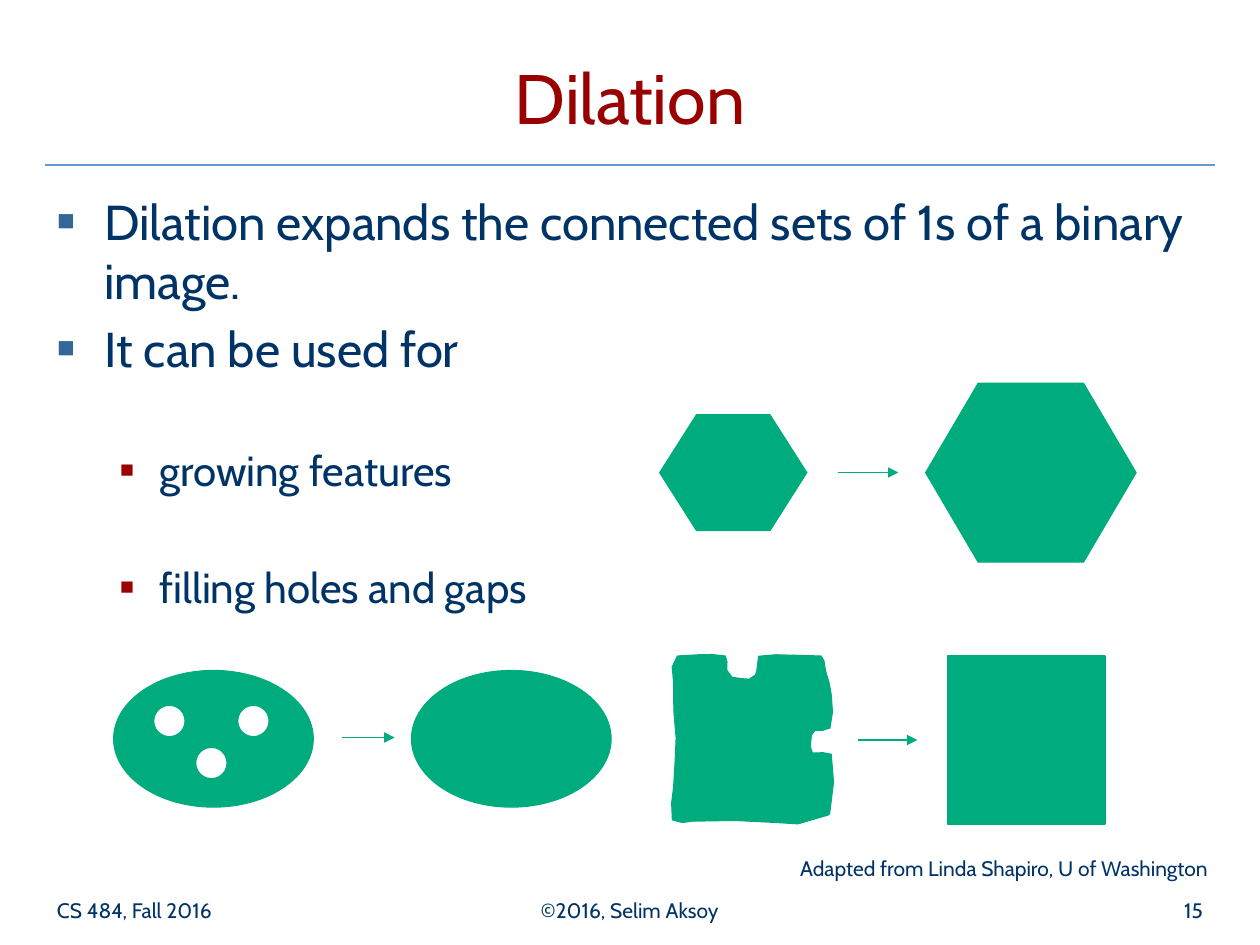
"""Build a slide on dilation of binary images, with before-and-after shapes."""
from lxml import etree
from pptx import Presentation
from pptx import util as u
from pptx.dml import color
from pptx.enum import shapes, text
from pptx.oxml import ns

COLORS = {"rule": "6699CC", "ink": "003366", "title": "990000", "white": "FFFFFF",
          "bullet": "336699", "subbullet": "990000", "feature": "00AB7E"}
FONT = "Cabin"
ALIGN = text.PP_ALIGN
BOTTOM, TOP = text.MSO_ANCHOR.BOTTOM, text.MSO_ANCHOR.TOP
KIND = shapes.MSO_SHAPE

LEVELS = {
    0: {"size": 28, "margin": 27, "hanging": 27, "bullet": "bullet", "scale": 60},
    1: {"size": 24, "margin": 58.5, "hanging": 22.5, "bullet": "subbullet", "scale": 55},
}
POINTS = [
    (0, 0, "Dilation expands the connected sets of 1s of a binary image."),
    (0, 5.3, "It can be used for"),
    (1, 38.3, "growing features"),
    (1, 38.3, "filling holes and gaps"),
]
GAPPED_START = (555, 520)
GAPPED_CURVES = [
    (561, 521, 569, 518, 576, 521), (579, 523, 576, 528, 577, 532),
    (578, 539, 583, 538, 589, 539), (594, 540, 596, 540, 600, 536),
    (600, 535, 601, 534, 601, 533), (603, 517, 598, 522, 616, 520),
    (628, 521, 640, 520, 652, 521), (655, 522, 654, 527, 655, 530),
    (656, 535, 656, 535, 658, 541), (659, 545, 660, 552, 660, 552),
    (660, 561, 663, 570, 659, 578), (657, 582, 650, 578, 647, 580),
    (644, 581, 644, 586, 644, 586), (644, 590, 642, 596, 645, 598),
    (649, 601, 659, 594, 660, 599), (665, 613, 660, 629, 659, 644),
    (659, 645, 659, 646, 658, 647), (649, 658, 616, 653, 616, 653),
    (593, 652, 573, 650, 550, 652), (548, 652, 535, 655, 534, 651),
    (532, 642, 534, 633, 535, 625), (536, 612, 537, 586, 537, 586),
    (536, 572, 534, 557, 535, 542), (535, 535, 531, 523, 538, 521),
    (544, 520, 549, 521, 555, 520),
]


def rgb(name):
    """Return the named colour."""
    return color.RGBColor.from_string(COLORS[name])


def apply(target, values):
    """Set each attribute of the target from a dict."""
    for name, value in values.items():
        setattr(target, name, value)


def add_frame(slide, box, anchor=TOP):
    """Add a wrapping text box and return its frame."""
    frame = slide.shapes.add_textbox(*map(u.Pt, box)).text_frame
    apply(frame, {"word_wrap": True, "vertical_anchor": anchor})
    return frame


def write(paragraph, wording, size, ink="ink"):
    """Add one formatted run to a paragraph."""
    run = paragraph.add_run()
    run.text = wording
    apply(run.font, {"name": FONT, "size": u.Pt(size)})
    run.font.color.rgb = rgb(ink)


def add_label(slide, box, wording, align, size=12, ink="ink", anchor=BOTTOM):
    """Add a single line of text."""
    paragraph = add_frame(slide, box, anchor).paragraphs[0]
    paragraph.alignment = align
    write(paragraph, wording, size, ink)


def add_bullet(paragraph, level):
    """Give a paragraph the indent and square of its level."""
    look = LEVELS[level]
    properties = paragraph._p.get_or_add_pPr()
    properties.set("marL", str(u.Pt(look["margin"])))
    properties.set("indent", str(-u.Pt(look["hanging"])))
    tint = etree.SubElement(properties, ns.qn("a:buClr"))
    etree.SubElement(tint, ns.qn("a:srgbClr"), val=COLORS[look["bullet"]])
    etree.SubElement(properties, ns.qn("a:buSzPct"), val=str(look["scale"] * 1000))
    etree.SubElement(properties, ns.qn("a:buFont"), typeface="Arial")
    etree.SubElement(properties, ns.qn("a:buChar"), char="■")


def add_points(slide, box):
    """Add the bulleted body text."""
    frame = add_frame(slide, box)
    for number, (level, gap, wording) in enumerate(POINTS):
        paragraph = frame.add_paragraph() if number else frame.paragraphs[0]
        apply(paragraph, {"level": level, "space_before": u.Pt(gap),
                          "alignment": ALIGN.LEFT})
        add_bullet(paragraph, level)
        write(paragraph, wording, LEVELS[level]["size"])


def paint(figure, fill="feature"):
    """Give a shape its fill and thin outline."""
    figure.shadow.inherit = False
    figure.fill.solid()
    figure.fill.fore_color.rgb = rgb(fill)
    figure.line.color.rgb = rgb("feature")
    figure.line.width = u.Pt(0.75)


def add_figure(slide, kind, box, fill="feature", adjustments=()):
    """Add a preset shape."""
    figure = slide.shapes.add_shape(kind, *map(u.Pt, box))
    for index, value in enumerate(adjustments):
        figure.adjustments[index] = value
    paint(figure, fill)


def add_line(slide, left, right, y, ink="feature", arrow=True):
    """Add a horizontal line, with an arrowhead if asked."""
    line = slide.shapes.add_connector(
        shapes.MSO_CONNECTOR.STRAIGHT, u.Pt(left), u.Pt(y), u.Pt(right), u.Pt(y))
    line.line.color.rgb = rgb(ink)
    line.line.width = u.Pt(0.75)
    if arrow:
        etree.SubElement(line.line._get_or_add_ln(), ns.qn("a:tailEnd"), type="triangle")
    etree.SubElement(line._element.spPr, ns.qn("a:effectLst"))


def curve_points(start, curves, steps=2):
    """Yield points along a chain of cubic curves, in tenths of a unit."""
    for curve in curves:
        corners = (start, curve[:2], curve[2:4], curve[4:])
        for step in range(1, steps + 1):
            t = step / steps
            weights = ((1 - t) ** 3, 3 * t * (1 - t) ** 2, 3 * t * t * (1 - t), t ** 3)
            yield tuple(10 * sum(w * corner[axis] for w, corner in zip(weights, corners))
                        for axis in (0, 1))
        start = curve[4:]


def add_gapped_square(slide):
    """Add the wavy square with two gaps."""
    x, y = GAPPED_START
    builder = slide.shapes.build_freeform(x * 10, y * 10, scale=u.Pt(0.072))
    outline = list(curve_points(GAPPED_START, GAPPED_CURVES))
    builder.add_line_segments(outline[:-1], close=True)
    paint(builder.convert_to_shape())


def add_growing(slide):
    """Show a hexagon that grows."""
    add_figure(slide, KIND.HEXAGON, (377, 237, 84, 66.2), adjustments=(0.318, 1.155))
    add_figure(slide, KIND.HEXAGON, (529, 219, 120.2, 102.2), adjustments=(0.294, 1.155))
    add_line(slide, 478.8, 513.4, 270)


def add_gap_filling(slide):
    """Show a square whose gaps are filled."""
    add_gapped_square(slide)
    add_figure(slide, KIND.RECTANGLE, (541.5, 374.8, 90, 96))
    add_line(slide, 490.3, 524.2, 422.9)


def add_hole_filling(slide):
    """Show an ellipse whose holes are filled."""
    for left in (65, 235.2):
        add_figure(slide, KIND.OVAL, (left, 383.2, 114, 78))
    for left, top in ((87.8, 403), (135.8, 403), (111.8, 427)):
        add_figure(slide, KIND.OVAL, (left, top, 18, 18), "white")
    add_line(slide, 195.5, 225.5, 421.4)


def main():
    """Build and save the slide."""
    deck = Presentation()
    apply(deck, {"slide_width": u.Pt(720), "slide_height": u.Pt(540)})
    slide = deck.slides.add_slide(deck.slide_layouts[6])
    add_line(slide, 25.5, 694.5, 94.3, "rule", arrow=False)
    add_label(slide, (25.5, 505.8, 150, 25), "CS 484, Fall 2016", ALIGN.LEFT)
    add_label(slide, (245.8, 505.8, 228, 25), "©2016, Selim Aksoy", ALIGN.CENTER)
    add_label(slide, (544.5, 505.8, 150, 25), "15", ALIGN.RIGHT)
    add_label(slide, (25.5, 15, 669, 67.5), "Dilation", ALIGN.CENTER, 40, "title")
    add_points(slide, (25.5, 105.8, 669, 391))
    add_growing(slide)
    add_gap_filling(slide)
    add_hole_filling(slide)
    add_label(slide, (427.5, 485.3, 270, 21.8),
              "Adapted from Linda Shapiro, U of Washington", ALIGN.RIGHT, anchor=TOP)
    deck.save("out.pptx")


if __name__ == "__main__":
    main()
